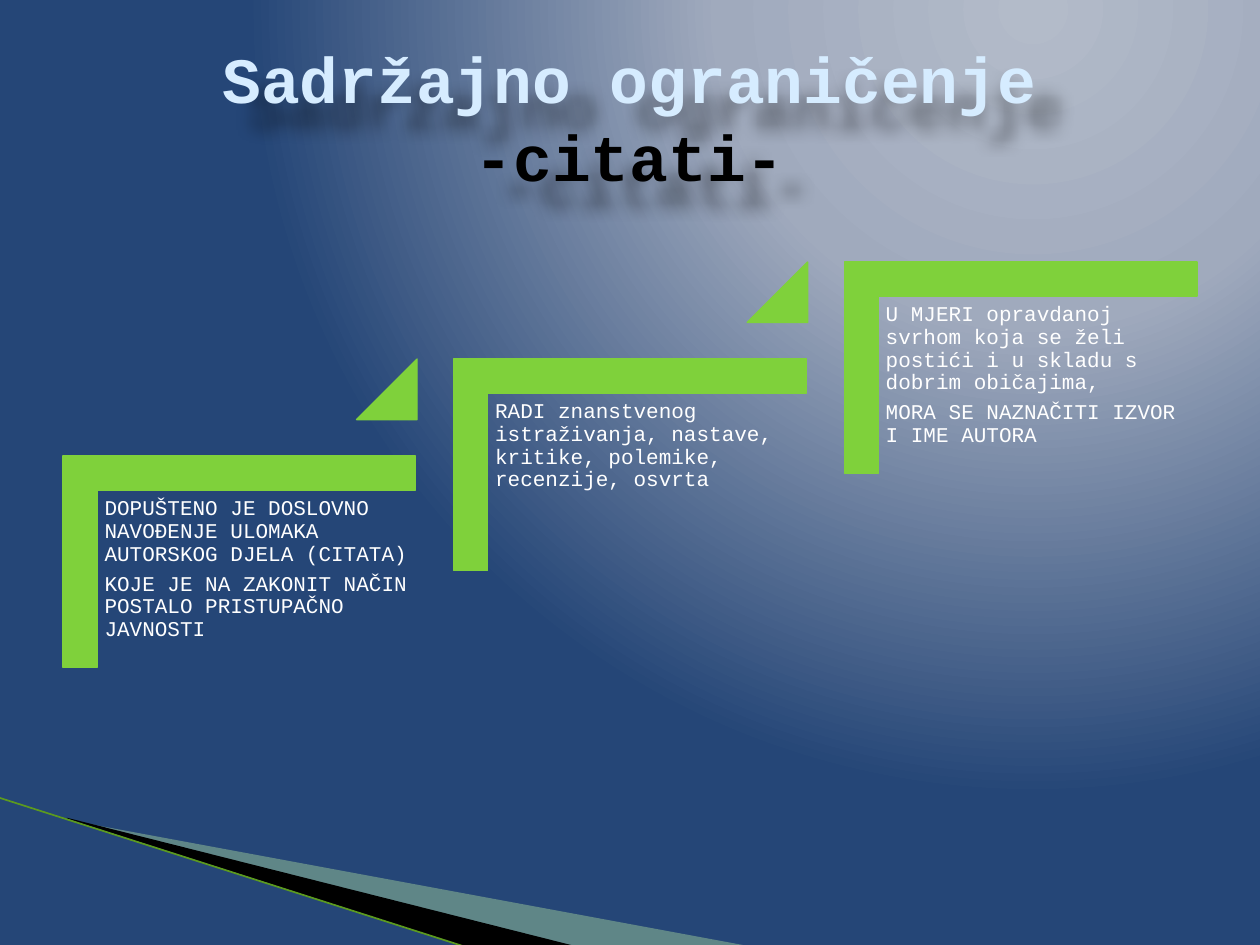
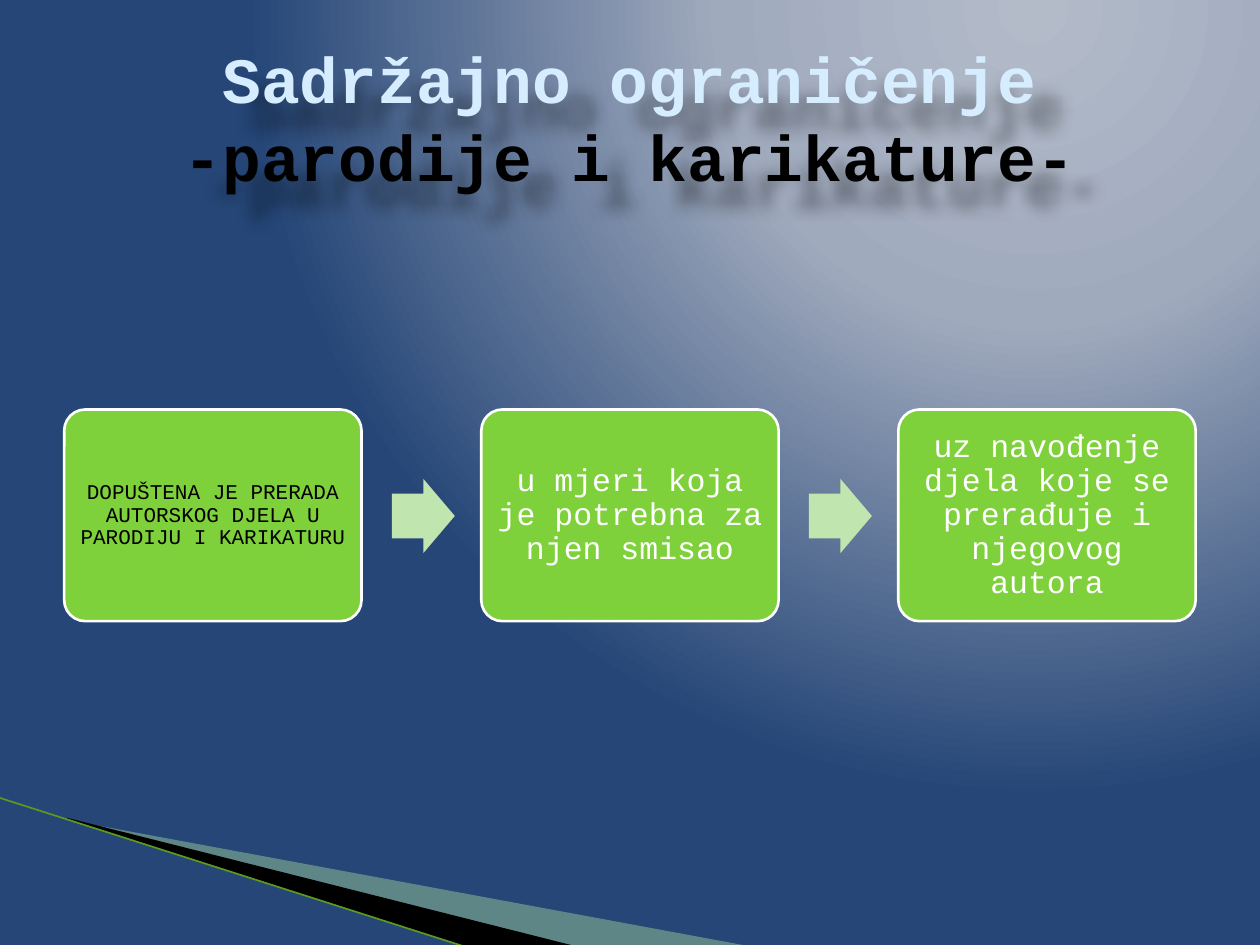
from dataclasses import dataclass

from pptx import Presentation
from pptx.dml.color import RGBColor
from pptx.enum.shapes import MSO_CONNECTOR, MSO_SHAPE
from pptx.enum.text import MSO_ANCHOR, PP_ALIGN
from pptx.oxml import parse_xml
from pptx.oxml.ns import nsdecls, qn
from pptx.shapes.autoshape import Shape
from pptx.slide import Slide, SlideMaster
from pptx.util import Pt

PX = 9144  # EMU in one px, 100 px to the inch
CORNER, WEDGE = MSO_SHAPE.CORNER, MSO_SHAPE.ISOSCELES_TRIANGLE
ROUND, ARROW = MSO_SHAPE.ROUNDED_RECTANGLE, MSO_SHAPE.RIGHT_ARROW
STRAIGHT = MSO_CONNECTOR.STRAIGHT
TOP, MIDDLE = MSO_ANCHOR.TOP, MSO_ANCHOR.MIDDLE
LEFT, CENTER = PP_ALIGN.LEFT, PP_ALIGN.CENTER


@dataclass(frozen=True)
class Theme:
    font: str = "Courier New"
    title: float = 36.9
    large: int = 18
    small: int = 12
    white: str = "FFFFFF"
    black: str = "000000"
    sky: str = "D6ECFF"
    green: str = "7FD13B"
    pale: str = "C0E5AF"
    mint: str = "B8E7A1"
    moss: str = "5C9A1F"
    glow: tuple[tuple[int, str], ...] = (
        (0, "B3BBC9"), (40, "A0AABD"), (100, "254677"))


THEME = Theme()


@dataclass(frozen=True)
class Box:
    left: int
    top: int
    width: int
    height: int

    def emu(self) -> tuple[int, int, int, int]:
        return self.left * PX, self.top * PX, self.width * PX, self.height * PX


@dataclass(frozen=True)
class Fin:
    """Thin wedge in the lower left corner."""
    points: tuple[tuple[int, int], ...]
    color: str
    alpha: int


@dataclass(frozen=True)
class Card:
    text: str
    size: int
    color: str
    inset: int


FINS = (
    Fin(((55, 651), (595, 751), (456, 751), (55, 650)), THEME.mint, 40),
    Fin(((53, 649), (457, 751), (372, 752), (54, 650)), THEME.black, 100),
)
STEPS = (
    ("DOPUŠTENO JE DOSLOVNO NAVOĐENJE ULOMAKA AUTORSKOG DJELA (CITATA)",
     "KOJE JE NA ZAKONIT NAČIN POSTALO PRISTUPAČNO JAVNOSTI"),
    ("RADI znanstvenog istraživanja, nastave, kritike, polemike, "
     "recenzije, osvrta",),
    ("U MJERI opravdanoj svrhom koja se želi postići i u skladu s "
     "dobrim običajima,",
     "MORA SE NAZNAČITI IZVOR I IME AUTORA"),
)
CARDS = (
    Card("DOPUŠTENA JE PRERADA AUTORSKOG DJELA U PARODIJU I KARIKATURU",
         THEME.small, THEME.black, 5),
    Card("u mjeri koja je potrebna za njen smisao",
         THEME.large, THEME.white, 7),
    Card("uz navođenje djela koje se prerađuje i njegovog autora",
         THEME.large, THEME.white, 7),
)


def rgb(color: str) -> RGBColor:
    return RGBColor.from_string(color)


def paint(shape: Shape, fill: str, line: str = "", width: float = 0) -> None:
    shape.shadow.inherit = False
    shape.fill.solid()
    shape.fill.fore_color.rgb = rgb(fill)
    if line:
        shape.line.color.rgb = rgb(line)
        shape.line.width = Pt(width)
    else:
        shape.line.fill.background()


def draw(slide: Slide, kind: MSO_SHAPE, box: Box, *adjust: float) -> Shape:
    shape = slide.shapes.add_shape(kind, *box.emu())
    for index, value in enumerate(adjust):
        shape.adjustments[index] = value
    return shape


def write(shape: Shape, texts: tuple[str, ...], size: int, color: str,
          inset: int, align: PP_ALIGN, anchor: MSO_ANCHOR) -> None:
    frame = shape.text_frame
    frame.word_wrap = True
    frame.vertical_anchor = anchor
    frame.margin_left = frame.margin_right = inset * PX
    frame.margin_top = frame.margin_bottom = inset * PX
    frame.text = "\n".join(texts)
    for para in frame.paragraphs:
        para.alignment = align
        para.line_spacing = 0.9
        para.space_after = Pt(0.35 * size)
        para.font.name = THEME.font
        para.font.size = Pt(size)
        para.font.color.rgb = rgb(color)


def set_glow(master: SlideMaster) -> None:
    """Give all slides the round gradient background."""
    master.background.fill.gradient()
    stops = "".join(
        f'<a:gs pos="{pos * 1000}"><a:srgbClr val="{color}"/></a:gs>'
        for pos, color in THEME.glow)
    glow = parse_xml(
        f'<a:gradFill {nsdecls("a")} rotWithShape="1"><a:gsLst>{stops}</a:gsLst>'
        '<a:path path="circle"><a:fillToRect l="65000" t="0" r="0" b="98000"/>'
        '</a:path></a:gradFill>')
    old = master.element.find(f".//{qn('p:bgPr')}/{qn('a:gradFill')}")
    old.getparent().replace(old, glow)


def add_fins(slide: Slide) -> None:
    for fin in FINS:
        start, *rest = fin.points
        pen = slide.shapes.build_freeform(*start, scale=PX)
        pen.add_line_segments(rest, close=True)
        shape = pen.convert_to_shape()
        paint(shape, fin.color)
        if fin.alpha < 100:
            tint = shape.element.find(f".//{qn('a:srgbClr')}")
            tint.append(parse_xml(
                f'<a:alpha {nsdecls("a")} val="{fin.alpha * 1000}"/>'))
    edge = slide.shapes.add_connector(
        STRAIGHT, -1 * PX, 633 * PX, 371 * PX, 752 * PX)
    edge.line.color.rgb = rgb(THEME.moss)
    edge.line.width = Pt(0.95)
    edge.element.spPr.append(parse_xml(f'<a:effectLst {nsdecls("a")}/>'))


def add_title(slide: Slide, topic: str) -> None:
    title = slide.shapes.add_textbox(*Box(50, 30, 900, 125).emu())
    title.element.spPr.append(parse_xml(
        f'<a:effectLst {nsdecls("a")}><a:outerShdw blurRad="110000" '
        'dist="256000" dir="2700000" algn="tl" rotWithShape="0">'
        f'<a:srgbClr val="{THEME.black}"><a:alpha val="40000"/></a:srgbClr>'
        '</a:outerShdw></a:effectLst>'))
    frame = title.text_frame
    frame.word_wrap = True
    frame.vertical_anchor = MIDDLE
    para = frame.paragraphs[0]
    para.alignment = CENTER
    para.font.name = THEME.font
    para.font.size = Pt(THEME.title)
    para.font.bold = True
    head = para.add_run()
    head.text = "Sadržajno ograničenje"
    head.font.color.rgb = rgb(THEME.sky)
    para.add_line_break()
    tail = para.add_run()
    tail.text = topic
    tail.font.color.rgb = rgb(THEME.black)


def add_stairs(slide: Slide) -> None:
    for index, texts in enumerate(STEPS):
        left, top = 106 + 310 * index, 306 - 77 * index
        corner = draw(slide, CORNER, Box(left, top, 168, 280), 0.161, 0.161)
        corner.rotation = 90
        paint(corner, THEME.green, THEME.green, 0.79)
        label = slide.shapes.add_textbox(
            *Box(left - 28, top + 84, 253, 222).emu())
        write(label, texts, THEME.small, THEME.white, 5, LEFT, TOP)
        if index < len(STEPS) - 1:
            wedge = draw(slide, WEDGE, Box(left + 177, top - 21, 48, 48), 1)
            paint(wedge, THEME.green, THEME.green, 0.79)


def add_flow(slide: Slide) -> None:
    for index, card in enumerate(CARDS):
        left = 51 + 331 * index
        tile = draw(slide, ROUND, Box(left, 325, 236, 168), 0.1)
        paint(tile, THEME.green, THEME.white, 1.5)
        write(tile, (card.text,), card.size, card.color, card.inset,
              CENTER, MIDDLE)
        if index < len(CARDS) - 1:
            arrow = draw(slide, ARROW, Box(left + 260, 380, 50, 59), 0.6, 0.5)
            paint(arrow, THEME.pale)


def main() -> None:
    deck = Presentation()
    deck.slide_width, deck.slide_height = 1000 * PX, 750 * PX
    set_glow(deck.slide_master)
    pages = (("-citati-", add_stairs), ("-parodije i karikature-", add_flow))
    for topic, fill in pages:
        slide = deck.slides.add_slide(deck.slide_layouts[6])
        add_fins(slide)
        fill(slide)
        add_title(slide, topic)
    deck.save("out.pptx")


if __name__ == "__main__":
    main()
